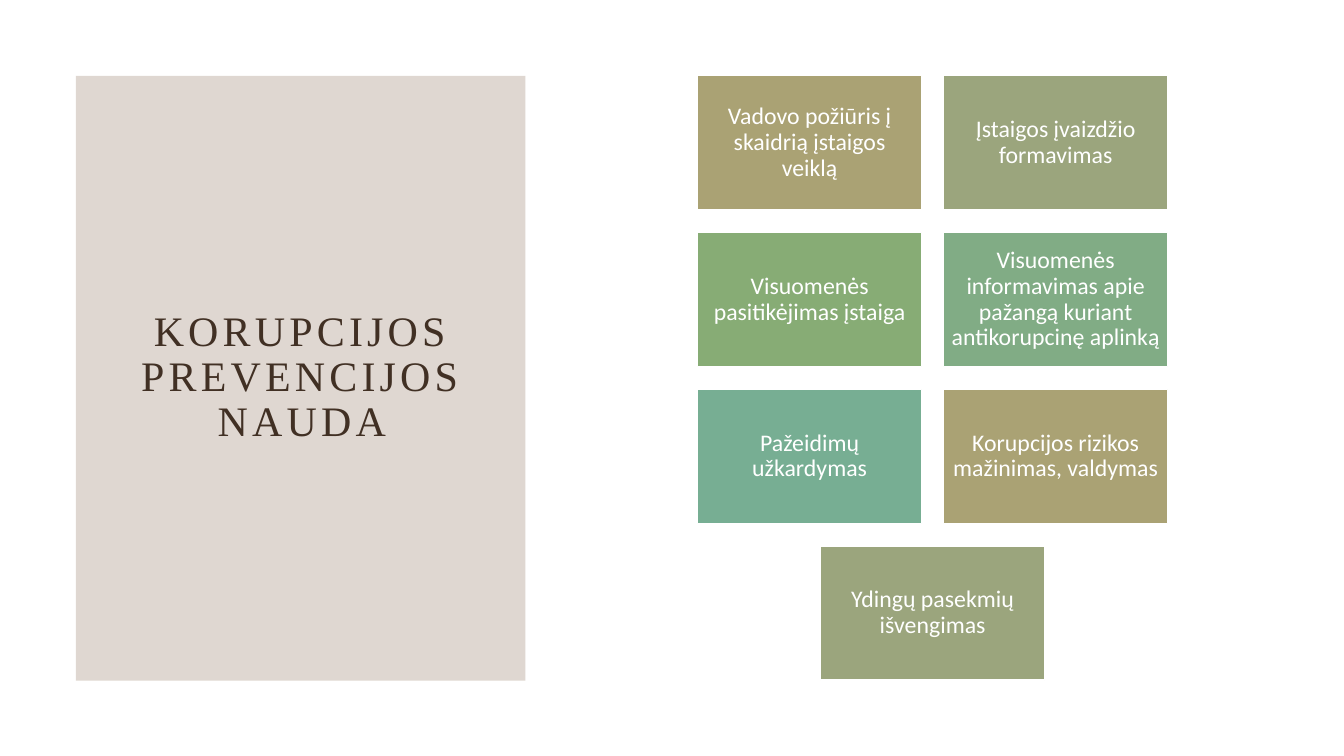
"""Build a slide on the benefits of corruption prevention."""
from lxml import etree
from pptx import Presentation
from pptx.dml.color import RGBColor
from pptx.enum.shapes import MSO_SHAPE
from pptx.enum.text import MSO_ANCHOR, MSO_AUTO_SIZE, PP_ALIGN
from pptx.oxml.ns import qn
from pptx.util import Cm, Pt

RECTANGLE = MSO_SHAPE.RECTANGLE
MIDDLE = MSO_ANCHOR.MIDDLE
CENTER = PP_ALIGN.CENTER
NO_AUTOFIT = MSO_AUTO_SIZE.NONE
TITLE_ONLY = 5

BENEFITS = [
    ("Vadovo požiūris į skaidrią įstaigos veiklą", "AAA274"),
    ("Įstaigos įvaizdžio formavimas", "9BA57D"),
    ("Visuomenės pasitikėjimas įstaiga", "87AC75"),
    ("Visuomenės informavimas apie pažangą kuriant antikorupcinę aplinką", "81AC85"),
    ("Pažeidimų užkardymas", "77AE93"),
    ("Korupcijos rizikos mažinimas, valdymas", "AAA274"),
    ("Ydingų pasekmių išvengimas", "9BA57D"),
]
COLUMNS = 2
GRID_LEFT, GRID_TOP = 17.58, 1.91
CARD_WIDTH, CARD_HEIGHT = 5.65, 3.38
COLUMN_STEP, ROW_STEP = 6.2, 3.95


def add_box(left, top, width, height, color):
    box = slide.shapes.add_shape(RECTANGLE, Cm(left), Cm(top), Cm(width), Cm(height))
    box.shadow.inherit = False
    box.fill.solid()
    box.fill.fore_color.rgb = RGBColor.from_string(color)
    return box


def write_text(frame, text, font_name, size, color):
    frame.text = text
    frame.word_wrap = True
    frame.auto_size = NO_AUTOFIT
    frame.vertical_anchor = MIDDLE
    paragraph = frame.paragraphs[0]
    paragraph.alignment = CENTER
    paragraph.line_spacing = 0.9
    paragraph.font.name = font_name
    paragraph.font.size = Pt(size)
    paragraph.font.color.rgb = RGBColor.from_string(color)


presentation = Presentation()
presentation.slide_width, presentation.slide_height = Cm(33.87), Cm(19.05)
slide = presentation.slides.add_slide(presentation.slide_layouts[TITLE_ONLY])

title = slide.shapes.title
title.left, title.top, title.width, title.height = Cm(3.18), Cm(3.81), Cm(8.86), Cm(11.43)
write_text(title.text_frame, "KORUPCIJOS PREVENCIJOS NAUDA", "Times New Roman", 30, "413024")
title_run = title.text_frame.paragraphs[0].runs[0]
title_run.font._element.set("spc", "300")

panel = add_box(1.91, 1.91, 11.33, 15.24, "836148")
panel.line.fill.background()
panel_color = panel.element.spPr.find(qn("a:solidFill"))[0]
etree.SubElement(panel_color, qn("a:alpha"), val="25000")
title.element.addprevious(panel.element)

for index, (benefit, color) in enumerate(BENEFITS):
    row, column = divmod(index, COLUMNS)
    cards_in_row = min(COLUMNS, len(BENEFITS) - row * COLUMNS)
    left = GRID_LEFT + (column + (COLUMNS - cards_in_row) / 2) * COLUMN_STEP
    card = add_box(left, GRID_TOP + row * ROW_STEP, CARD_WIDTH, CARD_HEIGHT, color)
    card.line.color.rgb = RGBColor.from_string("FFFFFF")
    card.line.width = Pt(1)
    frame = card.text_frame
    frame.margin_left = frame.margin_right = Cm(0.17)
    frame.margin_top = frame.margin_bottom = Cm(0.17)
    write_text(frame, benefit, "Calibri", 17, "FFFFFF")

presentation.save("out.pptx")
